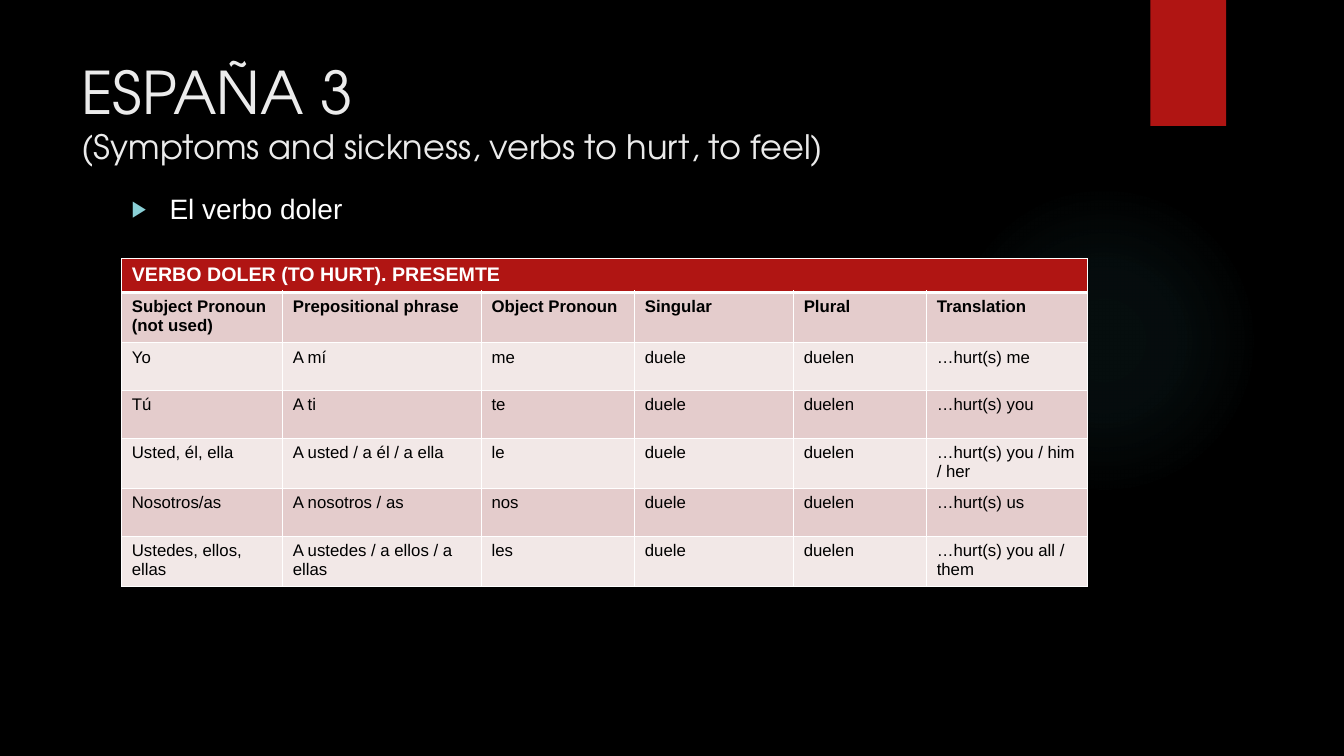
from dataclasses import dataclass

import pptx
import pptx.dml.color
import pptx.enum.shapes
import pptx.enum.text
import pptx.oxml
import pptx.oxml.ns
import pptx.util

Pt = pptx.util.Pt
SHAPES = pptx.enum.shapes.MSO_SHAPE
DRAWING = pptx.oxml.ns.nsdecls("a")


@dataclass(frozen=True)
class Theme:
    background: str = "000000"
    accent: str = "B01513"
    glow: str = "50B9C1"
    title: str = "EBEBEB"
    light: str = "FFFFFF"
    dark: str = "000000"
    bullet: str = "8AD0D6"
    bands: tuple = ("E4CCCC", "F2E8E7")
    title_font: str = "TeX Gyre Adventor"
    body_font: str = "Arial"
    title_size: float = 42
    subtitle_size: float = 24
    body_size: float = 20
    heading_size: float = 14
    cell_size: float = 12


THEME = Theme()

TITLE = "ESPAÑA 3"
SUBTITLE = "(Symptoms and sickness, verbs to hurt, to feel)"
TOPIC = "El verbo doler"
TABLE_TITLE = "VERBO DOLER (TO HURT). PRESEMTE"
HEADINGS = ["Subject Pronoun (not used)", "Prepositional phrase", "Object Pronoun",
            "Singular", "Plural", "Translation"]
PERSONS = [
    ("Yo", "A mí", "me", "…hurt(s) me"),
    ("Tú", "A ti", "te", "…hurt(s) you"),
    ("Usted, él, ella", "A usted / a él / a ella", "le", "…hurt(s) you / him / her"),
    ("Nosotros/as", "A nosotros / as", "nos", "…hurt(s) us"),
    ("Ustedes, ellos, ellas", "A ustedes / a ellos / a ellas", "les",
     "…hurt(s) you all / them"),
]
COLUMN_WIDTHS = [115, 142, 109.5, 113.5, 95, 115]
TITLE_ROW_HEIGHT = 23.5
ROW_HEIGHT = 34.1


def rgb(value):
    return pptx.dml.color.RGBColor.from_string(value)


def points(box):
    return [Pt(length) for length in box]


def add_span(para, text, size, color, font=THEME.body_font, bold=False):
    span = para.add_run()
    span.text = text
    span.font.size = Pt(size)
    span.font.name = font
    span.font.bold = bold
    span.font.color.rgb = rgb(color)


def add_plain_shape(page, kind, box):
    shape = page.shapes.add_shape(kind, *points(box))
    shape.shadow.inherit = False
    shape.line.fill.background()
    return shape


def add_text_box(page, box):
    frame = page.shapes.add_textbox(*points(box)).text_frame
    frame.word_wrap = True
    frame.vertical_anchor = pptx.enum.text.MSO_ANCHOR.TOP
    return frame.paragraphs[0]


def add_glow(page, box):
    """Draw a faint round light that fades out from its centre."""
    shape = add_plain_shape(page, SHAPES.OVAL, box)
    shape.fill.background()
    stops = "".join(
        f'<a:gs pos="{place * 1000}"><a:srgbClr val="{THEME.glow}">'
        f'<a:alpha val="{opacity * 1000}"/></a:srgbClr></a:gs>'
        for place, opacity in [(0, 7), (36, 6), (69, 0), (100, 0)])
    gradient = pptx.oxml.parse_xml(
        f'<a:gradFill {DRAWING} rotWithShape="1"><a:gsLst>{stops}</a:gsLst>'
        '<a:path path="circle"><a:fillToRect l="50000" t="50000" r="50000" b="50000"/>'
        '</a:path></a:gradFill>')
    properties = shape.element.spPr
    properties.replace(properties.find(pptx.oxml.ns.qn("a:noFill")), gradient)


def add_ribbon(page, box):
    shape = add_plain_shape(page, SHAPES.RECTANGLE, box)
    shape.fill.solid()
    shape.fill.fore_color.rgb = rgb(THEME.accent)


def add_title(page, box):
    para = add_text_box(page, box)
    add_span(para, TITLE, THEME.title_size, THEME.title, THEME.title_font)
    para.add_line_break()
    add_span(para, SUBTITLE, THEME.subtitle_size, THEME.title, THEME.title_font)


def add_topic(page, box):
    para = add_text_box(page, box)
    properties = para._p.get_or_add_pPr()
    properties.set("marL", str(Pt(27)))
    properties.set("indent", str(-Pt(27)))
    for bullet in (f'<a:buClr {DRAWING}><a:srgbClr val="{THEME.bullet}"/></a:buClr>',
                   f'<a:buSzPct {DRAWING} val="80000"/>',
                   f'<a:buFont {DRAWING} typeface="{THEME.body_font}"/>',
                   f'<a:buChar {DRAWING} char="▶"/>'):
        properties.append(pptx.oxml.parse_xml(bullet))
    add_span(para, TOPIC, THEME.body_size, THEME.light)


def style_cell(cell, fill, top=1, bottom=1):
    """Give a cell white borders, then its fill."""
    properties = cell._tc.get_or_add_tcPr()
    for side, width in (("L", 1), ("R", 1), ("T", top), ("B", bottom)):
        properties.append(pptx.oxml.parse_xml(
            f'<a:ln{side} {DRAWING} w="{Pt(width)}"><a:solidFill>'
            f'<a:srgbClr val="{THEME.light}"/></a:solidFill></a:ln{side}>'))
    cell.fill.solid()
    cell.fill.fore_color.rgb = rgb(fill)


def add_verb_table(page, left, top):
    rows = [HEADINGS] + [[subject, phrase, pronoun, "duele", "duelen", translation]
                         for subject, phrase, pronoun, translation in PERSONS]
    box = (left, top, sum(COLUMN_WIDTHS), TITLE_ROW_HEIGHT + len(rows) * ROW_HEIGHT)
    table = page.shapes.add_table(len(rows) + 1, len(HEADINGS), *points(box)).table
    table.first_row = table.horz_banding = False
    for column, width in zip(table.columns, COLUMN_WIDTHS):
        column.width = Pt(width)
    for row in table.rows:
        row.height = Pt(ROW_HEIGHT)
    table.rows[0].height = Pt(TITLE_ROW_HEIGHT)

    for cell in table.rows[0].cells:
        style_cell(cell, THEME.accent, bottom=3)
    title_cell = table.cell(0, 0)
    title_cell.merge(table.cell(0, len(HEADINGS) - 1))
    add_span(title_cell.text_frame.paragraphs[0], TABLE_TITLE,
             THEME.heading_size, THEME.light, bold=True)

    for index, texts in enumerate(rows):
        is_heading = index == 0
        for column, text in enumerate(texts):
            cell = table.cell(index + 1, column)
            style_cell(cell, THEME.bands[index % 2], top=3 if is_heading else 1)
            add_span(cell.text_frame.paragraphs[0], text,
                     THEME.cell_size, THEME.dark, bold=is_heading)


def build_verb_slide(deck):
    page = deck.slides.add_slide(deck.slide_layouts[6])
    page.background.fill.solid()
    page.background.fill.fore_color.rgb = rgb(THEME.background)
    add_glow(page, (677.5, 132, 222, 222))
    add_ribbon(page, (821.8, 0, 54, 90))
    add_title(page, (51, 36, 741, 110))
    add_topic(page, (87, 133.5, 760, 330))
    add_verb_table(page, 87, 184.8)


def main():
    deck = pptx.Presentation()
    deck.slide_width, deck.slide_height = Pt(960), Pt(540)
    build_verb_slide(deck)
    deck.save("out.pptx")


if __name__ == "__main__":
    main()
